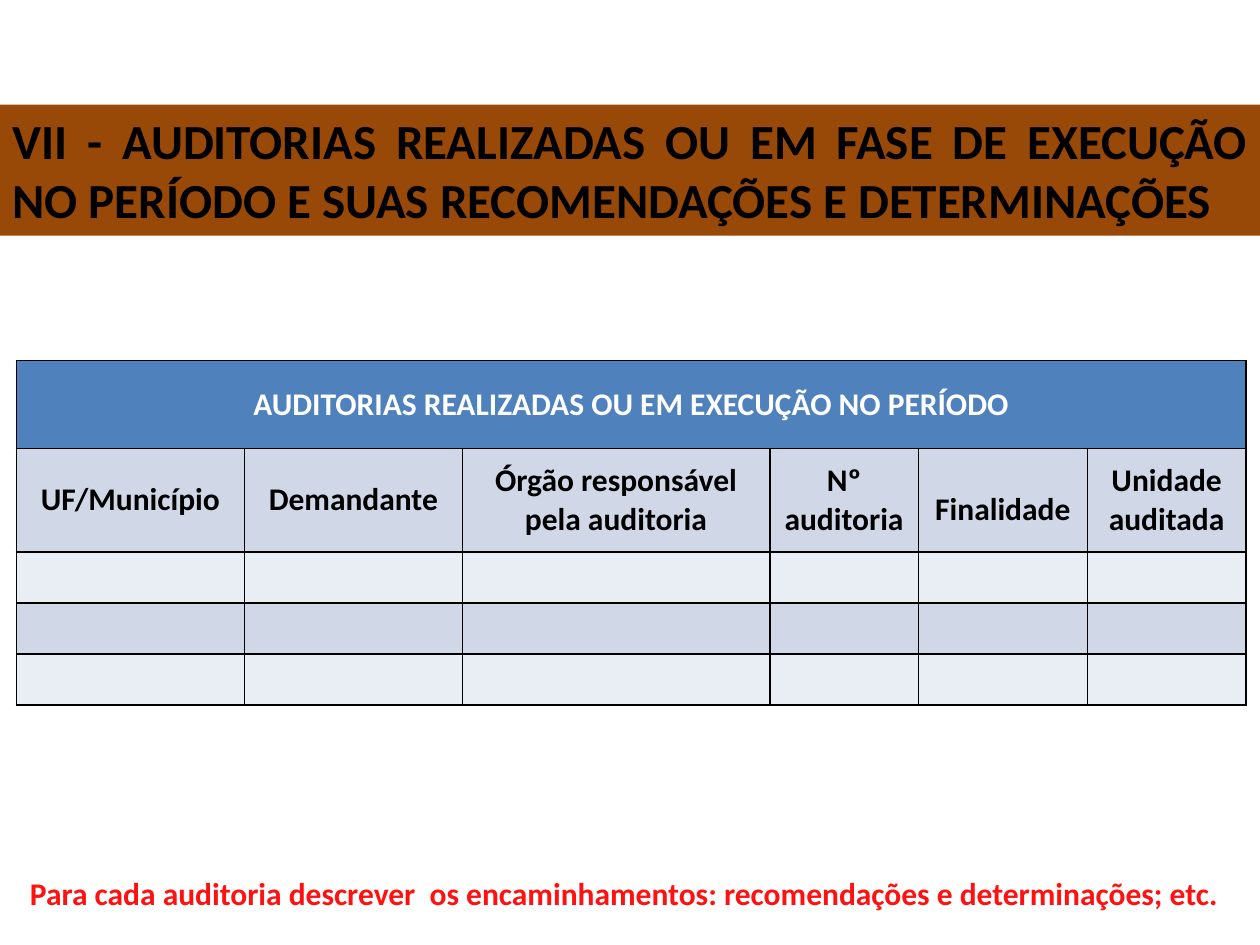
from lxml import etree
from pptx import Presentation
from pptx.dml.color import RGBColor
from pptx.enum import text
from pptx.oxml import ns
from pptx.util import Inches, Pt

COLORS = {
    "band": "984807",
    "header": "4F81BD",
    "dark row": "D0D8E8",
    "light row": "E9EDF4",
    "black": "000000",
    "white": "FFFFFF",
    "note": "FF1111",
}


def write(frame, wording, size, color, alignment):
    """Fill the frame's first paragraph with one bold run."""
    paragraph = frame.paragraphs[0]
    paragraph.alignment = alignment
    run = paragraph.add_run()
    run.text = wording
    run.font.name = "Calibri"
    run.font.size = Pt(size)
    run.font.bold = True
    run.font.color.rgb = RGBColor.from_string(COLORS[color])
    return paragraph


def style_cell(cell, color):
    """Give the cell black borders all round and a solid fill."""
    properties = cell._tc.get_or_add_tcPr()
    for side in ("a:lnL", "a:lnR", "a:lnT", "a:lnB"):
        line = etree.SubElement(properties, ns.qn(side), w=str(Pt(1)))
        fill = etree.SubElement(line, ns.qn("a:solidFill"))
        etree.SubElement(fill, ns.qn("a:srgbClr"), val=COLORS["black"])
    cell.fill.solid()
    cell.fill.fore_color.rgb = RGBColor.from_string(COLORS[color])
    cell.vertical_anchor = text.MSO_ANCHOR.MIDDLE


presentation = Presentation()
presentation.slide_width = Inches(10)
presentation.slide_height = Inches(7.5)
slide = presentation.slides.add_slide(presentation.slide_layouts[5])

# Title band
title = slide.shapes.title
title.left, title.top = Inches(0), Inches(0.83)
title.width, title.height = Inches(10), Inches(1.04)
title.fill.solid()
title.fill.fore_color.rgb = RGBColor.from_string(COLORS["band"])
title.text_frame.auto_size = text.MSO_AUTO_SIZE.NONE
title.text_frame.vertical_anchor = text.MSO_ANCHOR.TOP
write(title.text_frame,
      "VII - AUDITORIAS REALIZADAS OU EM FASE DE EXECUÇÃO NO PERÍODO "
      "E SUAS RECOMENDAÇÕES E DETERMINAÇÕES",
      28, "black", text.PP_ALIGN.JUSTIFY)

# Audit table
headings = ["UF/Município", "Demandante", "Órgão responsável pela auditoria",
            "Nº auditoria", "Finalidade", "Unidade auditada"]
column_widths = [1.81, 1.73, 2.44, 1.18, 1.34, 1.26]
row_heights = [0.7, 0.82, 0.4, 0.4, 0.4]
row_colors = ["header", "dark row", "light row", "dark row", "light row"]

table = slide.shapes.add_table(
    len(row_heights), len(column_widths), Inches(0.13), Inches(2.86),
    Inches(sum(column_widths)), Inches(sum(row_heights))).table
for column, width in zip(table.columns, column_widths):
    column.width = Inches(width)
for row, height, color in zip(table.rows, row_heights, row_colors):
    row.height = Inches(height)
    for cell in row.cells:
        style_cell(cell, color)

table.cell(0, 0).merge(table.cell(0, len(headings) - 1))
write(table.cell(0, 0).text_frame,
      "AUDITORIAS REALIZADAS OU EM EXECUÇÃO NO PERÍODO",
      18, "white", text.PP_ALIGN.CENTER)
for index, heading in enumerate(headings):
    paragraph = write(table.cell(1, index).text_frame, heading,
                      18, "black", text.PP_ALIGN.CENTER)
    if heading == "Finalidade":
        paragraph.line_spacing = 1.5

# Note below the table
note = slide.shapes.add_textbox(Inches(0.03), Inches(6.89), Inches(9.85), Inches(0.4))
note.text_frame.word_wrap = True
write(note.text_frame,
      "Para cada auditoria descrever  os encaminhamentos: "
      "recomendações e determinações; etc.",
      18, "note", text.PP_ALIGN.CENTER)

presentation.save("out.pptx")
